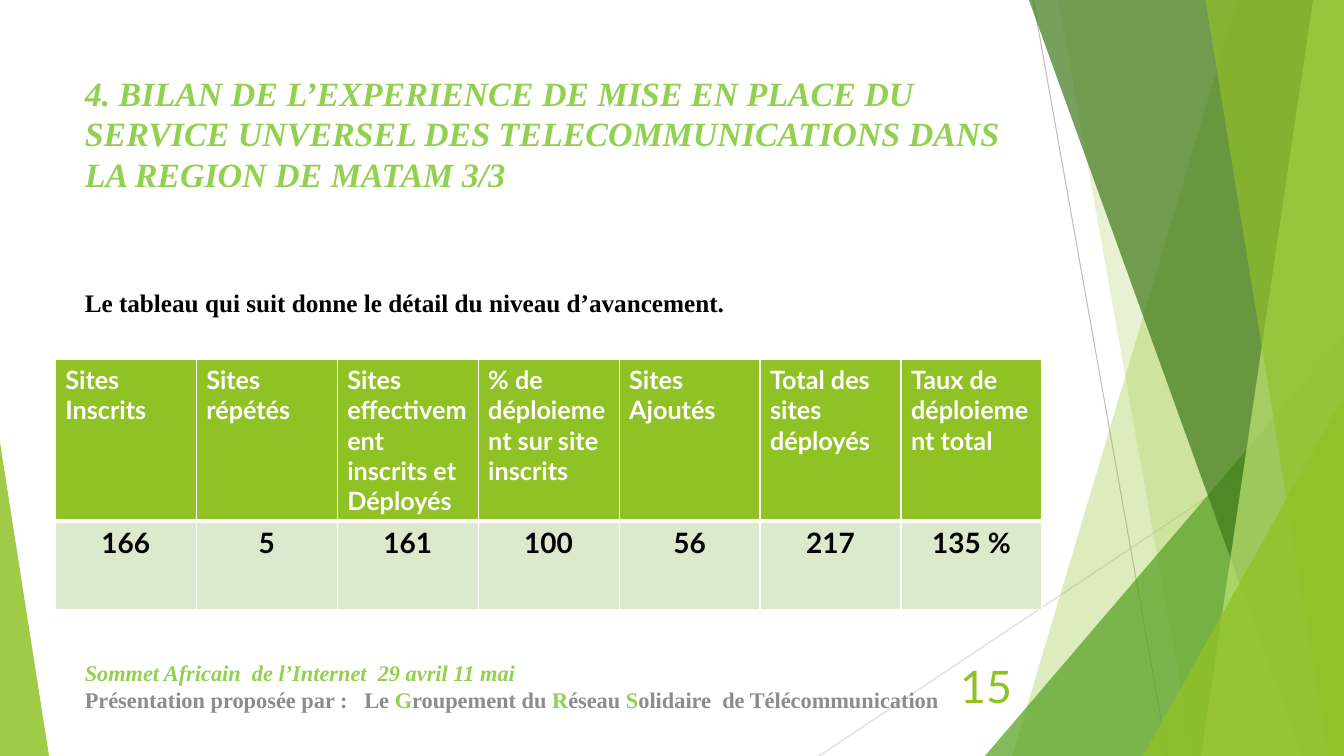
from lxml import etree
from pptx import Presentation
from pptx.dml.color import RGBColor
from pptx.enum.shapes import MSO_CONNECTOR, MSO_SHAPE
from pptx.enum.text import MSO_ANCHOR, PP_ALIGN
from pptx.oxml.ns import qn
from pptx.util import Pt

STRAIGHT = MSO_CONNECTOR.STRAIGHT
RIGHT_TRIANGLE = MSO_SHAPE.ISOSCELES_TRIANGLE
TOP, MIDDLE = MSO_ANCHOR.TOP, MSO_ANCHOR.MIDDLE
LEFT, CENTER, RIGHT = PP_ALIGN.LEFT, PP_ALIGN.CENTER, PP_ALIGN.RIGHT

WHITE = RGBColor(0xFF, 0xFF, 0xFF)
BLACK = RGBColor(0, 0, 0)
GRAY = RGBColor(0x8C, 0x8C, 0x8C)
LINE_GRAY = RGBColor(0xBF, 0xBF, 0xBF)
PALE_GRAY = RGBColor(0xD9, 0xD9, 0xD9)
GREEN = RGBColor(0x90, 0xC2, 0x26)
MID_GREEN = RGBColor(0x54, 0xA0, 0x21)
DARK_GREEN = RGBColor(0x3F, 0x78, 0x19)
LIGHT_GREEN = RGBColor(0xC0, 0xE4, 0x74)
TITLE_GREEN = RGBColor(0x92, 0xD0, 0x50)
ROW_GREEN = RGBColor(0xDB, 0xE9, 0xCD)

SERIF, SANS = "Times New Roman", "Lato"
TITLE = {"name": SERIF, "size": Pt(24.3), "bold": True, "italic": True}
INTRO = {"name": SERIF, "size": Pt(18), "bold": True}
EVENT = {"name": SERIF, "size": Pt(16), "bold": True, "italic": True}
PRESENTER = {"name": SERIF, "size": Pt(16), "bold": True}
NUMBER = {"name": SANS, "size": Pt(32)}
HEADER = {"name": SANS, "size": Pt(18), "bold": True}
FIGURE = {"name": SANS, "size": Pt(20), "bold": True}

SITES = [
    ("Sites Inscrits", "166"),
    ("Sites répétés", "5"),
    ("Sites effectivement inscrits et Déployés", "161"),
    ("% de déploiement sur site inscrits", "100"),
    ("Sites Ajoutés", "56"),
    ("Total des sites déployés", "217"),
    ("Taux de déploiement total", "135 %"),
]


def paint(shape, color, opacity):
    """Fill a shape with a translucent colour and no outline."""
    shape.shadow.inherit = False
    shape.fill.solid()
    shape.fill.fore_color.rgb = color
    shape.line.fill.background()
    tint = shape.fill._xPr.find(qn("a:solidFill"))[0]
    etree.SubElement(tint, qn("a:alpha"), val=str(opacity * 1000))


def add_ray(slide, start, end, color):
    """Draw a thin straight line between two points."""
    ray = slide.shapes.add_connector(STRAIGHT, *map(Pt, start + end))
    ray.line.color.rgb = color
    ray.line.width = Pt(0.75)
    etree.SubElement(ray._element.spPr, qn("a:effectLst"))


def add_facet(slide, box, top_x, bottom_x, color, opacity):
    """Draw a facet that reaches from a slanted edge to the right side of the box."""
    left, top, width, height = box
    outline = slide.shapes.build_freeform(left + top_x, top, scale=Pt(1))
    outline.add_line_segments([
        (left + width, top),
        (left + width, top + height),
        (left + bottom_x, top + height),
    ])
    paint(outline.convert_to_shape(), color, opacity)


def add_corner(slide, box, apex, color, opacity):
    """Draw a triangle with its apex at the given share of the box width."""
    corner = slide.shapes.add_shape(RIGHT_TRIANGLE, *map(Pt, box))
    corner.adjustments[0] = apex
    paint(corner, color, opacity)


def add_facets(slide, box):
    """Draw the layered green facets inside the box."""
    left, top, width, height = box
    right, bottom = left + width, top + height

    def right_corner(x, y, color, opacity):
        """Draw a triangle in the lower right corner."""
        add_corner(slide, (left + x, top + y, width - x, height - y), 1, color, opacity)

    add_ray(slide, (left + 153, top), (left + 249, bottom), LINE_GRAY)
    add_ray(slide, (right, top + 290), (left, bottom), PALE_GRAY)
    add_facet(slide, box, 299, 138, GREEN, 30)
    add_facet(slide, box, 171, 267, GREEN, 20)
    right_corner(118.5, 240, MID_GREEN, 72)
    add_facet(slide, box, 150, 344.5, DARK_GREEN, 70)
    add_facet(slide, box, 353, 273, LIGHT_GREEN, 70)
    add_facet(slide, box, 276, 364, GREEN, 65)
    right_corner(231.5, 283, GREEN, 80)


def write(paragraph, pieces, style, align=LEFT):
    """Write (text, colour) pieces into a paragraph in one style."""
    paragraph.alignment = align
    for text, color in pieces:
        run = paragraph.add_run()
        run.text = text
        run.font.color.rgb = color
        for key, value in style.items():
            setattr(run.font, key, value)


def add_text(slide, box, lines, anchor=TOP, align=LEFT, wrap=True):
    """Place lines of (pieces, style) in a text box."""
    frame = slide.shapes.add_textbox(*map(Pt, box)).text_frame
    frame.word_wrap = wrap
    frame.vertical_anchor = anchor
    for index, (pieces, style) in enumerate(lines):
        paragraph = frame.add_paragraph() if index else frame.paragraphs[0]
        write(paragraph, pieces, style, align)


def add_border(cell, side, width):
    """Draw a white border on one side of a cell."""
    border = etree.SubElement(cell._tc.get_or_add_tcPr(), qn(f"a:ln{side}"), w=str(Pt(width)))
    fill = etree.SubElement(border, qn("a:solidFill"))
    etree.SubElement(fill, qn("a:srgbClr"), val=str(WHITE))


def add_progress_table(slide, box):
    """Build the table of deployed sites in the box."""
    header_height = 115
    table = slide.shapes.add_table(2, len(SITES), *map(Pt, box)).table
    table.horz_banding = False
    table.rows[0].height = Pt(header_height)
    table.rows[1].height = Pt(box[3] - header_height)
    rows = [(HEADER, WHITE, GREEN, LEFT, 3), (FIGURE, BLACK, ROW_GREEN, CENTER, 1)]
    for column, site in enumerate(SITES):
        table.columns[column].width = Pt(box[2] / len(SITES))
        for row, (style, color, fill, align, bottom) in enumerate(rows):
            cell = table.cell(row, column)
            top = 1 if row == 0 else 3
            for side, width in {"L": 1, "R": 1, "T": top, "B": bottom}.items():
                add_border(cell, side, width)
            cell.fill.solid()
            cell.fill.fore_color.rgb = fill
            write(cell.text_frame.paragraphs[0], [(site[row], color)], style, align)


def add_footer(slide, box):
    """Write the event, the presenter and the slide number along the box."""
    left, top, width, height = box
    event = [("Sommet Africain  de l’Internet  29 avril 11 mai", TITLE_GREEN)]
    presenter = [
        ("Présentation proposée par :   Le ", GRAY),
        ("G", TITLE_GREEN), ("roupement du ", GRAY),
        ("R", TITLE_GREEN), ("éseau ", GRAY),
        ("S", TITLE_GREEN), ("olidaire  de Télécommunication", GRAY),
    ]
    add_text(slide, box, [(event, EVENT), (presenter, PRESENTER)], MIDDLE)
    number_box = (left + width - 100.5, top, 54, height)
    add_text(slide, number_box, [([("15", GREEN)], NUMBER)], MIDDLE, RIGHT)


def main():
    """Build and save the slide."""
    deck = Presentation()
    deck.slide_width, deck.slide_height = Pt(960), Pt(540)
    slide = deck.slides.add_slide(deck.slide_layouts[6])
    add_facets(slide, (585, 0, 375, 540))
    add_corner(slide, (0, 316, 35, 224), 0, GREEN, 85)
    title = "4. BILAN DE L’EXPERIENCE DE MISE EN PLACE DU SERVICE UNVERSEL DES TELECOMMUNICATIONS DANS LA REGION DE MATAM 3/3"
    add_text(slide, (53.5, 48, 677, 104), [([(title, TITLE_GREEN)], TITLE)])
    add_progress_table(slide, (39.5, 257, 704.9, 178))
    add_footer(slide, (53.5, 475.5, 723, 29))
    intro = "Le tableau qui suit donne le détail du niveau d’avancement."
    add_text(slide, (53.5, 202, 476, 29), [([(intro, BLACK)], INTRO)], wrap=False)
    deck.save("out.pptx")


if __name__ == "__main__":
    main()
